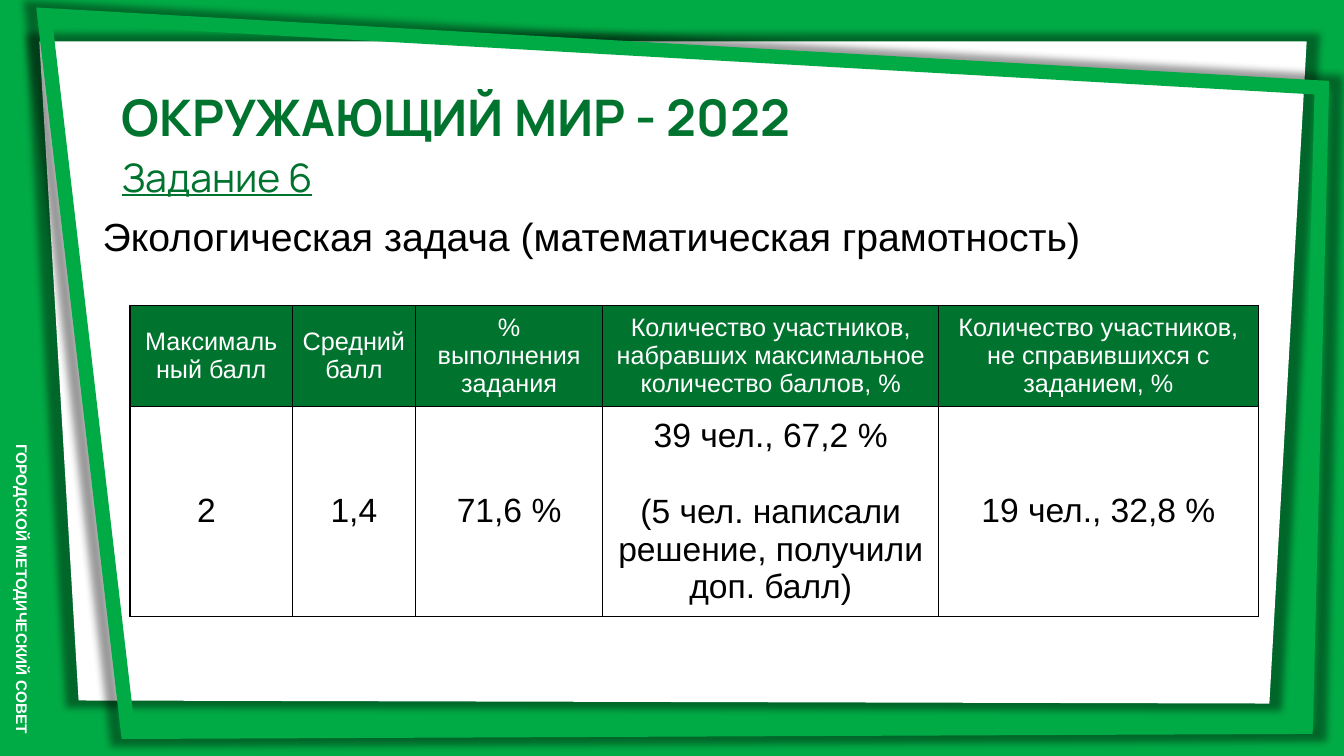
"""Build the slide with the results of task 6 in the 2022 nature studies test."""
from lxml.etree import SubElement
from pptx import Presentation
from pptx.dml.color import RGBColor
from pptx.enum.text import MSO_ANCHOR, PP_ALIGN
from pptx.oxml import parse_xml
from pptx.oxml.ns import nsdecls, qn
from pptx.util import Inches, Pt

GREEN = RGBColor(0x00, 0xAB, 0x45)
DARK = RGBColor(0x00, 0x73, 0x2F)
WHITE = RGBColor(0xFF, 0xFF, 0xFF)
BLACK = RGBColor(0x00, 0x00, 0x00)


def write(frame, text, size=28, color=BLACK, font="Arial", bold=False,
          under=False, align=PP_ALIGN.LEFT, gap=0):
    frame.word_wrap = True
    for i, line in enumerate(text.split("\n")):
        para = frame.add_paragraph() if i else frame.paragraphs[0]
        para.alignment = align
        if i:
            para.space_before = Pt(gap)
        run = para.add_run()
        run.text = line
        run.font.name = font
        run.font.size = Pt(size)
        run.font.bold = bold
        run.font.underline = under
        run.font.color.rgb = color


def outline(points):
    spots = [(Inches(x), Inches(y)) for x, y in points]
    pen = slide.shapes.build_freeform(*spots[0])
    pen.add_line_segments(spots[1:], close=True)
    shape = pen.convert_to_shape()
    shape.shadow.inherit = False
    effects = shape._element.spPr.find(qn("a:effectLst"))
    effects.append(parse_xml(
        f'<a:outerShdw {nsdecls("a")} blurRad="63500" sx="102000" sy="102000" '
        'algn="ctr" rotWithShape="0"><a:srgbClr val="000000">'
        '<a:alpha val="40000"/></a:srgbClr></a:outerShdw>'))
    return shape


deck = Presentation()
deck.slide_width = Inches(13.33)
deck.slide_height = Inches(7.5)
slide = deck.slides.add_slide(deck.slide_layouts[6])
slide.background.fill.solid()
slide.background.fill.fore_color.rgb = GREEN

side = slide.shapes.add_textbox(Inches(-1.45), Inches(5.64), Inches(3.3), Inches(0.41))
side.rotation = 90
side.text_frame.margin_top = side.text_frame.margin_bottom = Inches(0.1)
write(side.text_frame, "ГОРОДСКОЙ МЕТОДИЧЕСКИЙ СОВЕТ", size=11, color=WHITE,
      bold=True, align=PP_ALIGN.CENTER)

sheet = outline([(0.39, 0.41), (12.96, 0.41), (12.59, 6.98), (0.78, 6.95)])
sheet.fill.solid()
sheet.fill.fore_color.rgb = WHITE
sheet.line.fill.background()

border = outline([(0.44, 0.15), (1.27, 7.26), (12.95, 7.21), (13.11, 0.87)])
border.fill.background()
border.line.color.rgb = GREEN
border.line.width = Pt(10.25)
SubElement(border.line._ln, qn("a:miter"), lim="800000")

titles = [
    (1.11, 0.81, 7.37, "ОКРУЖАЮЩИЙ МИР - 2022",
     dict(size=36, color=DARK, font="Manrope", bold=True)),
    (1.11, 1.47, 2.87, "Задание 6", dict(color=DARK, font="Manrope", under=True)),
    (0.92, 2.06, 12.18, "Экологическая задача (математическая грамотность)", {}),
]
for left, top, width, text, style in titles:
    box = slide.shapes.add_textbox(Inches(left), Inches(top), Inches(width), Inches(0.71))
    write(box.text_frame, text, **style)

widths = [1.61, 1.22, 1.86, 3.33, 3.17]
heights = [0.94, 1.96]
rows = [
    ["Максимальный балл", "Средний балл", "% выполнения задания",
     "Количество участников, набравших максимальное количество баллов, %",
     "Количество участников, не справившихся с заданием, %"],
    ["2 ", "1,4", "71,6 %",
     "39 чел., 67,2 %\n(5 чел. написали решение, получили доп. балл)",
     "19 чел., 32,8 %"],
]
looks = [(DARK, dict(size=18, color=WHITE)), (WHITE, dict(size=24, gap=27.6))]
table = slide.shapes.add_table(
    len(rows), len(widths), Inches(1.29), Inches(3.03),
    Inches(sum(widths)), Inches(sum(heights))).table
for column, width in zip(table.columns, widths):
    column.width = Inches(width)
for r, (texts, (back, style)) in enumerate(zip(rows, looks)):
    table.rows[r].height = Inches(heights[r])
    for c, text in enumerate(texts):
        cell = table.cell(r, c)
        cell.vertical_anchor = MSO_ANCHOR.MIDDLE
        props = cell._tc.get_or_add_tcPr()
        for edge in ("lnL", "lnR", "lnT", "lnB"):
            props.append(parse_xml(
                f'<a:{edge} {nsdecls("a")} w="12700"><a:solidFill>'
                f'<a:srgbClr val="{BLACK}"/></a:solidFill></a:{edge}>'))
        cell.fill.solid()
        cell.fill.fore_color.rgb = back
        write(cell.text_frame, text, align=PP_ALIGN.CENTER, **style)

deck.save("out.pptx")
